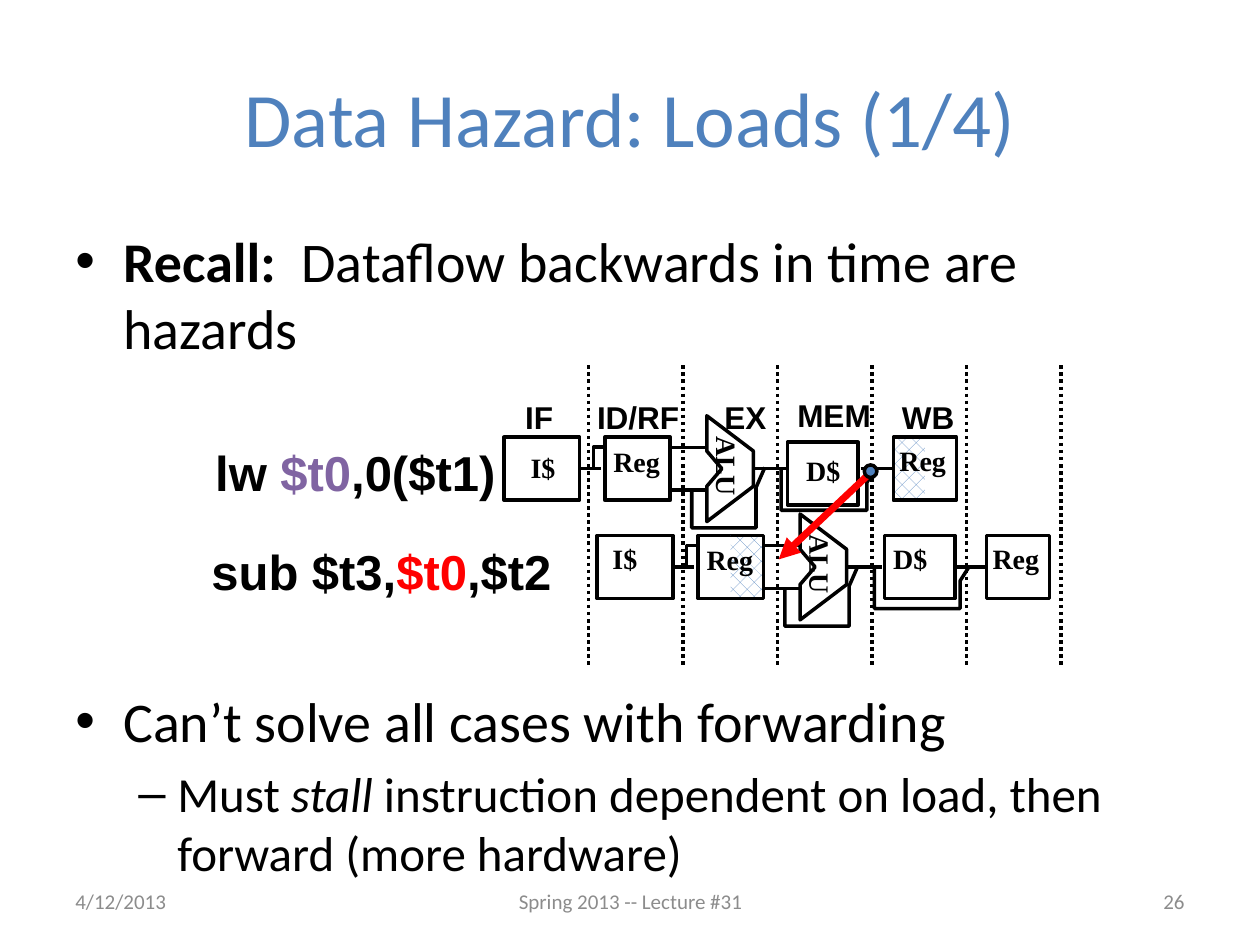
from pptx import Presentation
from pptx import util as u
from pptx.dml.color import RGBColor
from pptx.enum import dml, shapes, text
from pptx.oxml.ns import qn
from lxml import etree

Inches, Pt = u.Inches, u.Pt
LEFT, CENTER, RIGHT = text.PP_ALIGN.LEFT, text.PP_ALIGN.CENTER, text.PP_ALIGN.RIGHT
TOP, MIDDLE = text.MSO_ANCHOR.TOP, text.MSO_ANCHOR.MIDDLE


class Theme:
    black = RGBColor.from_string("000000")
    white = RGBColor.from_string("FFFFFF")
    blue = RGBColor.from_string("4F81BD")
    purple = RGBColor.from_string("8064A2")
    red = RGBColor.from_string("FF0000")
    grey = RGBColor.from_string("8C8C8C")
    prose, code, unit = "Calibri", "Arial", "Times New Roman"
    title_size, bullet_size, sub_size, code_size = 44, 32, 28, 28
    stage_size, unit_size, footer_size = 18, 16, 12
    wire, arrow = 2, 4


prs = Presentation()
prs.slide_width, prs.slide_height = Inches(10), Inches(7.5)
slide = prs.slides.add_slide(prs.slide_layouts[6])


def add_text(box, runs, font, size, align=LEFT, anchor=TOP, wrap=True, paragraph=None):
    """Write (words, colour, bold, italic) runs in a new box, or in a given paragraph."""
    if paragraph is None:
        frame = slide.shapes.add_textbox(*map(Inches, box)).text_frame
        frame.word_wrap, frame.vertical_anchor = wrap, anchor
        paragraph = frame.paragraphs[0]
    paragraph.alignment = align
    for words, colour, bold, italic in runs:
        run = paragraph.add_run()
        run.text = words
        run.font.name, run.font.size = font, Pt(size)
        run.font.bold, run.font.italic = bold, italic
        run.font.color.rgb = colour


def add_outline(points, shaded=False):
    start, *rest = [(Inches(x), Inches(y)) for x, y in points]
    builder = slide.shapes.build_freeform(*start)
    builder.add_line_segments(rest, close=start == rest[-1])
    outline = builder.convert_to_shape()
    outline.shadow.inherit = False
    outline.line.color.rgb, outline.line.width = Theme.black, Pt(Theme.wire)
    if shaded:
        outline.fill.patterned()
        outline.fill.pattern = dml.MSO_PATTERN.PERCENT_25
        outline.fill.fore_color.rgb = Theme.blue
        outline.fill.back_color.rgb = Theme.white
    else:
        outline.fill.background()


# Title and bullets
add_text((0.5, 0.3, 9, 1.25), [("Data Hazard: Loads (1/4)", Theme.blue, False, False)],
         Theme.prose, Theme.title_size, CENTER, MIDDLE)

body = slide.shapes.add_textbox(Inches(0.5), Inches(1.75), Inches(9), Inches(5.4)).text_frame
body.word_wrap = True
bullets = [
    ("•", 0.38, 0.38, 6.4, Theme.bullet_size,
     [("Recall:", Theme.black, True, False),
      ("  Dataflow backwards in time are hazards", Theme.black, False, False)]),
    # The large gap leaves room for the pipeline diagram
    ("•", 0.38, 0.38, 186, Theme.bullet_size,
     [("Can’t solve all cases with forwarding", Theme.black, False, False)]),
    ("–", 0.81, 0.31, 5.6, Theme.sub_size,
     [("Must ", Theme.black, False, False),
      ("stall", Theme.black, False, True),
      (" instruction dependent on load, then forward (more hardware)",
       Theme.black, False, False)]),
]
for i, (mark, margin, hang, before, size, runs) in enumerate(bullets):
    bullet = body.paragraphs[0] if i == 0 else body.add_paragraph()
    bullet.space_before = Pt(before)
    bullet.level = 1 if mark == "–" else 0
    add_text(None, runs, Theme.prose, size, paragraph=bullet)
    props = bullet._p.get_or_add_pPr()
    props.set("marL", str(Inches(margin)))
    props.set("indent", str(-Inches(hang)))
    etree.SubElement(props, qn("a:buFont")).set("typeface", "Arial")
    etree.SubElement(props, qn("a:buChar")).set("char", mark)

# Clock-cycle boundaries
lines = [(4.67 + 0.75 * i, 2.9, 4.67 + 0.75 * i, 5.3, True) for i in range(6)]

# Stage names
for stage, x, y, width in [("IF", 4.07, 3.11, 0.43), ("ID/RF", 4.64, 3.11, 0.86),
                           ("EX", 5.65, 3.11, 0.55), ("MEM", 6.23, 3.09, 0.8),
                           ("WB", 7.06, 3.11, 0.63)]:
    add_text((x, y, width, 0.4), [(stage, Theme.black, True, False)],
             Theme.code, Theme.stage_size)

# Instructions
add_text((1.61, 3.46, 2.45, 0.57),
         [("lw ", Theme.black, True, False), ("$t0", Theme.purple, True, False),
          (",0($t1)", Theme.black, True, False)], Theme.code, Theme.code_size, wrap=False)
add_text((1.58, 4.25, 2.93, 0.57),
         [("sub $t3,", Theme.black, True, False), ("$t0", Theme.red, True, False),
          (",$t2", Theme.black, True, False)], Theme.code, Theme.code_size, wrap=False)

# Pipelines: origin, offset of the data cache, unit half in use, label offsets and widths
HEIGHT = 0.5
pipelines = [
    {"origin": (4, 3.47), "data": (2.25, 0.04), "shaded": ("write", -1),
     "labels": [("I$", 0.11, 0.06, 0.4), ("Reg", 0.77, 0.01, 0.57),
                ("D$", 2.3, 0.08, 0.48), ("Reg", 3.04, 0, 0.57)]},
    {"origin": (4.74, 4.25), "data": (2.28, 0), "shaded": ("read", 1),
     "labels": [("I$", 0.02, 0, 0.4), ("Reg", 0.77, 0.01, 0.57),
                ("D$", 2.25, 0, 0.48), ("Reg", 3.04, 0, 0.57)]},
]
alu = [(1.61, 0.39), (1.73, 0.25), (1.61, 0.11), (1.61, -0.17),
       (1.98, 0.11), (1.98, 0.39), (1.61, 0.67), (1.61, 0.39)]
bent_wires = [
    [(0.71, 0.25), (0.71, 0.08), (0.79, 0.08)],
    [(2.2, 0.25), (2.2, 0.58), (2.88, 0.58), (2.88, 0.36), (2.95, 0.25)],
    [(1.49, 0.42), (1.49, 0.72), (2, 0.72), (2, 0.4), (2.07, 0.24)],
]
straight_wires = [(0.6, 0.77, 0.25), (1.33, 1.6, 0.08), (1.33, 1.6, 0.42),
                  (1.99, 2.26, 0.25), (2.83, 3.08, 0.25)]

for pipeline in pipelines:
    left, top = pipeline["origin"]
    units = {"fetch": (0, 0, 0.3), "read": (0.8, 0, 0.26),
             "data": (*pipeline["data"], 0.28), "write": (3.09, 0, 0.25)}
    for unit, (dx, dy, half) in units.items():
        middle, y = left + dx + half, top + dy
        for side in (-1, 1):
            edge = middle + side * half
            add_outline([(middle, y), (edge, y), (edge, y + HEIGHT), (middle, y + HEIGHT)],
                        pipeline["shaded"] == (unit, side))
    for points in [alu, *bent_wires]:
        add_outline([(left + dx, top + dy) for dx, dy in points])
    for label, dx, dy, width in pipeline["labels"]:
        add_text((left + dx, top + dy, width, 0.36), [(label, Theme.black, True, False)],
                 Theme.unit, Theme.unit_size, CENTER if label == "I$" else LEFT, wrap=False)
    add_text((left + 1.44, top + 0.05, 0.67, 0.36), [("ALU", Theme.black, True, False)],
             Theme.unit, Theme.unit_size, wrap=False)
    slide.shapes[-1].rotation = 90
    lines += [(left + x1, top + dy, left + x2, top + dy, False)
              for x1, x2, dy in straight_wires]

# Wires and boundaries, then the backward dependence in red
hazard = (6.89, 3.77, 6.18, 4.44, False)
for line in [*lines, hazard]:
    *ends, dotted = line
    connector = slide.shapes.add_connector(shapes.MSO_CONNECTOR.STRAIGHT, *map(Inches, ends))
    is_hazard = line is hazard
    connector.line.color.rgb = Theme.red if is_hazard else Theme.black
    connector.line.width = Pt(Theme.arrow if is_hazard else Theme.wire)
    if dotted:
        connector.line.dash_style = dml.MSO_LINE.ROUND_DOT
    if is_hazard:
        etree.SubElement(connector.line._get_or_add_ln(), qn("a:tailEnd")).set("type", "triangle")
    etree.SubElement(connector._element.spPr, qn("a:effectLst"))

source_dot = slide.shapes.add_shape(shapes.MSO_SHAPE.OVAL, Inches(6.86), Inches(3.69),
                                    Inches(0.1), Inches(0.1))
source_dot.shadow.inherit = False
source_dot.fill.solid()
source_dot.fill.fore_color.rgb = Theme.blue
source_dot.line.color.rgb, source_dot.line.width = Theme.black, Pt(Theme.wire)

# Footer
for words, x, width, align in [("4/12/2013", 0.5, 2.33, LEFT),
                               ("Spring 2013 -- Lecture #31", 3.42, 3.17, CENTER),
                               ("26", 7.17, 2.33, RIGHT)]:
    add_text((x, 6.95, width, 0.4), [(words, Theme.grey, False, False)],
             Theme.prose, Theme.footer_size, align, MIDDLE)

prs.save("out.pptx")
